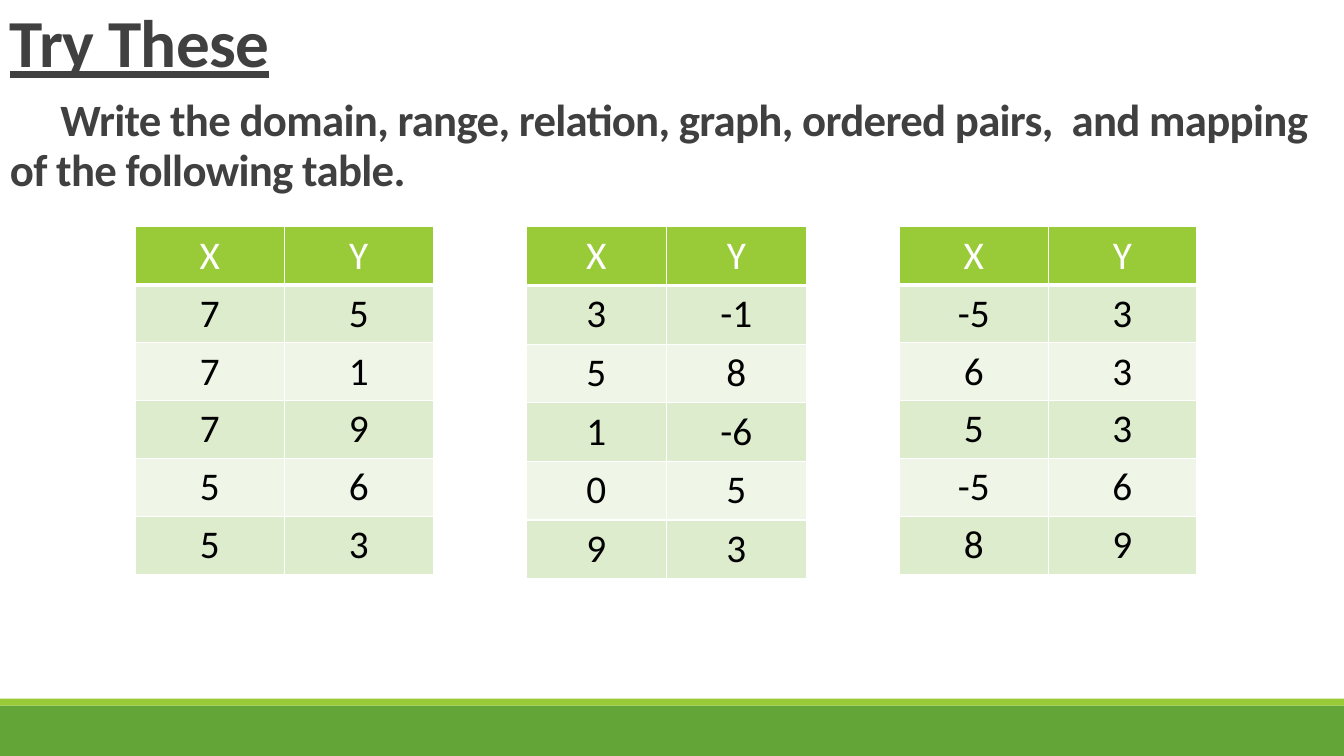
from dataclasses import dataclass

from lxml import etree
from pptx import Presentation
from pptx.dml.color import RGBColor
from pptx.enum.shapes import MSO_SHAPE
from pptx.enum.text import MSO_ANCHOR, PP_ALIGN
from pptx.oxml.ns import qn
from pptx.slide import Slide
from pptx.table import _Cell
from pptx.text.text import _Paragraph, _Run
from pptx.util import Pt

RECT = MSO_SHAPE.RECTANGLE
BOTTOM = MSO_ANCHOR.BOTTOM
CENTER = PP_ALIGN.CENTER


@dataclass(frozen=True)
class Theme:
    font: str = "Calibri"
    title: float = 48
    task: float = 32
    cell: float = 28
    ink: str = "404040"
    black: str = "000000"
    white: str = "FFFFFF"
    green: str = "63A537"
    lime: str = "99CB38"
    bands: tuple[str, str] = ("DEECCE", "EFF6E8")
    thin: float = 1
    thick: float = 3


@dataclass(frozen=True)
class Bar:
    top: float
    height: float
    fill: str


@dataclass(frozen=True)
class Grid:
    left: float
    width: float
    row: float
    pairs: tuple[tuple[int, int], ...]


THEME = Theme()
WIDTH, HEIGHT = 960, 540
GRID_TOP = 162
BARS = (Bar(504, 36, THEME.green), Bar(499, 5, THEME.lime))
GRIDS = (
    Grid(96.7, 212.8, 41.4, ((7, 5), (7, 1), (7, 9), (5, 6), (5, 3))),
    Grid(376, 200, 41.9, ((3, -1), (5, 8), (1, -6), (0, 5), (9, 3))),
    Grid(642.6, 212.2, 41.4, ((-5, 3), (6, 3), (5, 3), (-5, 6), (8, 9))),
)


def add_run(para: _Paragraph, text: str, size: float, color: str, bold: bool) -> _Run:
    run = para.add_run()
    run.text = text
    font = run.font
    font.name = THEME.font
    font.size = Pt(size)
    font.bold = bold
    font.color.rgb = RGBColor.from_string(color)
    return run


def draw_bar(slide: Slide, bar: Bar) -> None:
    shape = slide.shapes.add_shape(RECT, Pt(0), Pt(bar.top), Pt(WIDTH), Pt(bar.height))
    shape.shadow.inherit = False
    shape.fill.solid()
    shape.fill.fore_color.rgb = RGBColor.from_string(bar.fill)
    shape.line.fill.background()


def draw_title(slide: Slide) -> None:
    frame = slide.shapes.add_textbox(Pt(0), Pt(0), Pt(WIDTH), Pt(143.3)).text_frame
    frame.word_wrap = True
    frame.vertical_anchor = BOTTOM
    para = frame.paragraphs[0]
    para.line_spacing = 0.85
    head = add_run(para, "Try These", THEME.title, THEME.ink, True)
    head.font.underline = True
    para.add_line_break()
    indent = add_run(para, "\t", THEME.title, THEME.ink, True)
    task = add_run(
        para,
        "Write the domain, range, relation, graph, ordered pairs,  and "
        "mapping \tof the following table.",
        THEME.task, THEME.ink, True,
    )
    for run in (head, indent, task):
        run.font._element.set("spc", "-50")


def add_edge(cell: _Cell, side: str, width: float) -> None:
    props = cell._tc.get_or_add_tcPr()
    edge = etree.SubElement(props, qn(f"a:ln{side}"), w=str(Pt(width)))
    fill = etree.SubElement(edge, qn("a:solidFill"))
    etree.SubElement(fill, qn("a:srgbClr"), val=THEME.white)


def draw_cell(cell: _Cell, text: str, row: int) -> None:
    head = row == 0
    for side in "LRTB":
        add_edge(cell, side, THEME.thick if head and side == "B" else THEME.thin)
    cell.fill.solid()
    fill = THEME.lime if head else THEME.bands[(row - 1) % 2]
    cell.fill.fore_color.rgb = RGBColor.from_string(fill)
    para = cell.text_frame.paragraphs[0]
    para.alignment = CENTER
    add_run(para, text, THEME.cell, THEME.white if head else THEME.black, False)


def draw_grid(slide: Slide, grid: Grid) -> None:
    rows = (("X", "Y"), *grid.pairs)
    table = slide.shapes.add_table(
        len(rows), 2, Pt(grid.left), Pt(GRID_TOP), Pt(grid.width), Pt(grid.row * len(rows))
    ).table
    table.horz_banding = False
    for col in table.columns:
        col.width = Pt(grid.width / 2)
    for r, pair in enumerate(rows):
        table.rows[r].height = Pt(grid.row)
        for c, value in enumerate(pair):
            draw_cell(table.cell(r, c), str(value), r)


def main() -> None:
    deck = Presentation()
    deck.slide_width, deck.slide_height = Pt(WIDTH), Pt(HEIGHT)
    slide = deck.slides.add_slide(deck.slide_layouts[6])
    for bar in BARS:
        draw_bar(slide, bar)
    draw_title(slide)
    for grid in GRIDS:
        draw_grid(slide, grid)
    deck.save("out.pptx")


if __name__ == "__main__":
    main()
